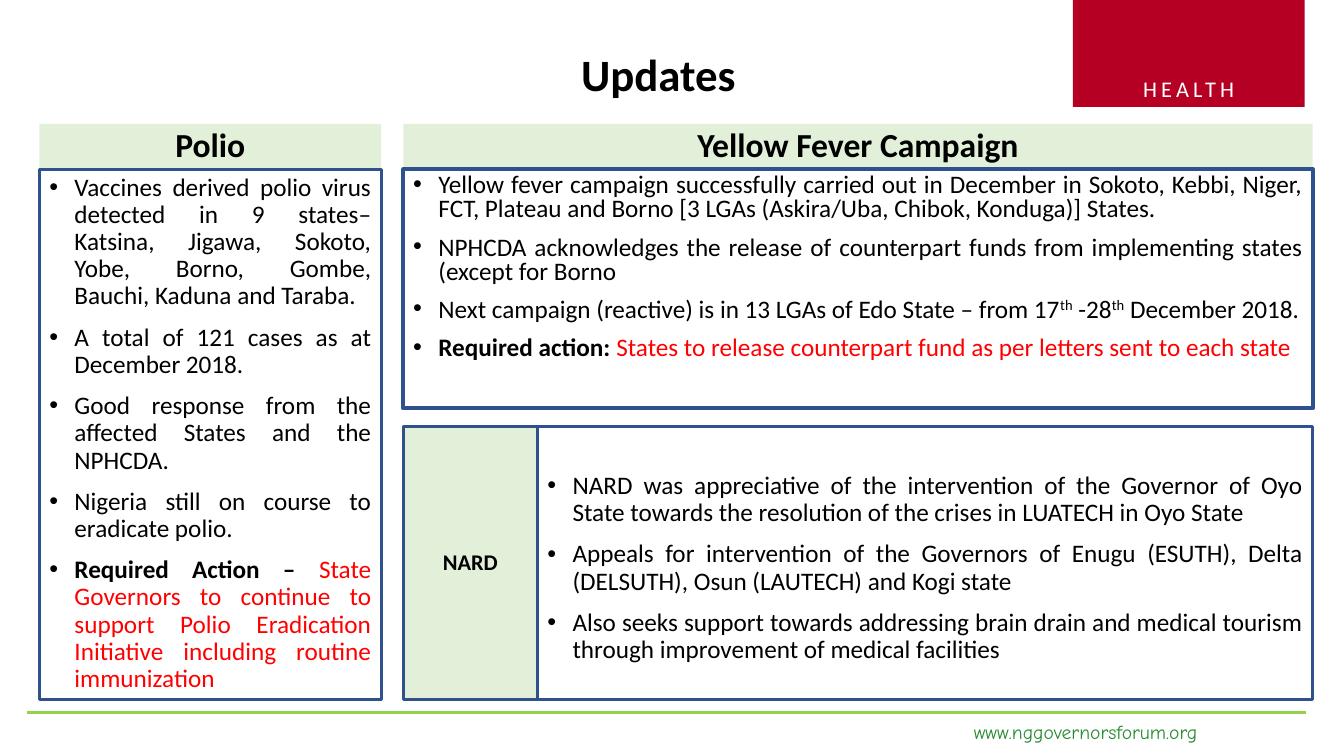
from dataclasses import dataclass

from lxml.etree import SubElement
from pptx import Presentation
from pptx.dml.color import RGBColor
from pptx.enum.shapes import MSO_CONNECTOR, MSO_SHAPE
from pptx.enum.text import MSO_ANCHOR as Anchor, MSO_AUTO_SIZE, PP_ALIGN as Align
from pptx.oxml.ns import qn
from pptx.util import Inches, Pt


@dataclass(frozen=True)
class Theme:
    font: str = "Calibri"
    web_font: str = "Comic Neue"
    black: str = "000000"
    white: str = "FFFFFF"
    red: str = "FF0000"
    crimson: str = "B50024"
    pale_green: str = "E2F0D9"
    blue: str = "2F528F"
    lime: str = "92D050"
    web_green: str = "288C32"
    title_size: int = 32
    heading_size: int = 24
    body_size: int = 18
    label_size: int = 16
    web_size: int = 14


T = Theme()

# A paragraph is a list of (text, style) runs
PLAIN, BOLD, ACTION, RAISED = "plain", "bold", "action", "raised"

TITLE = "Updates"
SECTION = "HEALTH"
WEBSITE = "www.nggovernorsforum.org"

POLIO = [
    [("Vaccines derived polio virus detected in 9 states– Katsina, Jigawa, Sokoto, "
      "Yobe, Borno, Gombe, Bauchi, Kaduna and Taraba.", PLAIN)],
    [("A total of 121 cases as at December 2018.", PLAIN)],
    [("Good response from the affected States and the NPHCDA.", PLAIN)],
    [("Nigeria still on course to eradicate polio.", PLAIN)],
    [("Required Action – ", BOLD),
     ("State Governors to continue to support Polio Eradication Initiative "
      "including routine immunization", ACTION)],
]
YELLOW_FEVER = [
    [("Yellow fever campaign successfully carried out in December in Sokoto, Kebbi, "
      "Niger, FCT, Plateau and Borno [3 LGAs (Askira/Uba, Chibok, Konduga)] States.", PLAIN)],
    [("NPHCDA acknowledges the release of counterpart funds from implementing states "
      "(except for Borno", PLAIN)],
    [("Next campaign (reactive) is in 13 LGAs of Edo State – from 17", PLAIN),
     ("th", RAISED), (" -28", PLAIN), ("th", RAISED), (" December 2018.", PLAIN)],
    [("Required action: ", BOLD),
     ("States to release counterpart fund as per letters sent to each state", ACTION)],
]
NARD = [
    [("NARD was appreciative of the intervention of the Governor of Oyo State towards "
      "the resolution of the crises in LUATECH in Oyo State", PLAIN)],
    [("Appeals for intervention of the Governors of Enugu (ESUTH), Delta (DELSUTH), "
      "Osun (LAUTECH) and Kogi state", PLAIN)],
    [("Also seeks support towards addressing brain drain and medical tourism through "
      "improvement of medical facilities", PLAIN)],
]

# Layout in inches
LEFT_X, LEFT_W = 0.39, 3.39
RIGHT_X, RIGHT_W = 4.0, 9.02
HEAD_Y, HEAD_H = 1.23, 0.45
BODY_Y = HEAD_Y + HEAD_H
BODY_END = 6.94
FEVER_H = 2.37
NARD_Y, NARD_LABEL_W = 4.23, 1.33


def rgb(code):
    return RGBColor.from_string(code)


def add_box(s, x, y, w, h, fill=None, line=None, line_width=2.25):
    sp = s.shapes.add_shape(MSO_SHAPE.RECTANGLE, Inches(x), Inches(y), Inches(w), Inches(h))
    sp.shadow.inherit = False
    if fill:
        sp.fill.solid()
        sp.fill.fore_color.rgb = rgb(fill)
    else:
        sp.fill.background()
    if line:
        sp.line.color.rgb = rgb(line)
        sp.line.width = Pt(line_width)
    else:
        sp.line.fill.background()
    return sp


def add_run(p, text, size, color=T.black, bold=False, font=T.font):
    r = p.add_run()
    r.text = text
    r.font.name = font
    r.font.size = Pt(size)
    r.font.bold = bold
    r.font.color.rgb = rgb(color)
    return r


def write_label(sp, text, size, anchor=Anchor.MIDDLE, color=T.black, bold=True, spacing=1.0):
    """Write one centred line and return its run."""
    tf = sp.text_frame
    tf.word_wrap = True
    tf.auto_size = MSO_AUTO_SIZE.NONE
    tf.vertical_anchor = anchor
    p = tf.paragraphs[0]
    p.alignment = Align.CENTER
    p.line_spacing = spacing
    return add_run(p, text, size, color, bold)


def write_bullets(sp, items, spacing=0.9, top_inset=0.05):
    tf = sp.text_frame
    tf.word_wrap = True
    tf.vertical_anchor = Anchor.TOP
    tf.margin_top = Inches(top_inset)
    for i, runs in enumerate(items):
        p = tf.add_paragraph() if i else tf.paragraphs[0]
        pPr = p._p.get_or_add_pPr()
        pPr.set("marL", str(Inches(0.25)))
        pPr.set("indent", str(-Inches(0.25)))
        SubElement(pPr, qn("a:buFont"), typeface="Arial")
        SubElement(pPr, qn("a:buChar"), char="•")
        p.alignment = Align.JUSTIFY
        p.line_spacing = spacing
        p.space_before = Pt(10 if i else 0)
        for text, style in runs:
            r = add_run(p, text, T.body_size, T.red if style == ACTION else T.black, style == BOLD)
            if style == RAISED:
                r.font._element.set("baseline", "30000")


def add_banner_and_footer(s):
    banner = add_box(s, 10.64, 0, 2.3, 1.06, fill=T.crimson)
    r = write_label(banner, SECTION, T.label_size, Anchor.BOTTOM, T.white, bold=False)
    r.font._element.set("spc", "300")

    rule = s.shapes.add_connector(
        MSO_CONNECTOR.STRAIGHT, Inches(0.27), Inches(7.07), Inches(12.95), Inches(7.07))
    rule.line.color.rgb = rgb(T.lime)
    rule.line.width = Pt(2.25)
    SubElement(rule._element.spPr, qn("a:effectLst"))

    web = s.shapes.add_textbox(Inches(9.56), Inches(7.09), Inches(2.86), Inches(0.34))
    web.text_frame.word_wrap = True
    add_run(web.text_frame.paragraphs[0], WEBSITE, T.web_size, T.web_green, font=T.web_font)


def add_title(s):
    title = s.shapes.title
    title.left, title.top = Inches(3.49), Inches(0.4)
    title.width, title.height = Inches(6.08), Inches(0.72)
    write_label(title, TITLE, T.title_size, spacing=0.9)


def add_panel(s, x, w, h, heading, items, line_width, spacing):
    head = add_box(s, x, HEAD_Y, w, HEAD_H, fill=T.pale_green)
    write_label(head, heading, T.heading_size, Anchor.BOTTOM, spacing=0.8)
    body = add_box(s, x, BODY_Y, w, h, line=T.blue, line_width=line_width)
    write_bullets(body, items, spacing)


def add_nard_row(s):
    h = BODY_END - NARD_Y
    body = add_box(s, RIGHT_X + NARD_LABEL_W, NARD_Y, RIGHT_W - NARD_LABEL_W, h, line=T.blue)
    write_bullets(body, NARD, top_inset=0.46)
    label = add_box(s, RIGHT_X, NARD_Y, NARD_LABEL_W, h, fill=T.pale_green, line=T.blue)
    write_label(label, "NARD", T.label_size, spacing=0.9)


def main():
    prs = Presentation()
    prs.slide_width, prs.slide_height = Inches(13.33), Inches(7.5)
    s = prs.slides.add_slide(prs.slide_layouts[5])
    add_banner_and_footer(s)
    add_title(s)
    add_panel(s, LEFT_X, LEFT_W, BODY_END - BODY_Y, "Polio", POLIO, 2.25, 0.9)
    add_panel(s, RIGHT_X, RIGHT_W, FEVER_H, "Yellow Fever Campaign", YELLOW_FEVER, 3, 0.8)
    add_nard_row(s)
    prs.save("out.pptx")


if __name__ == "__main__":
    main()
